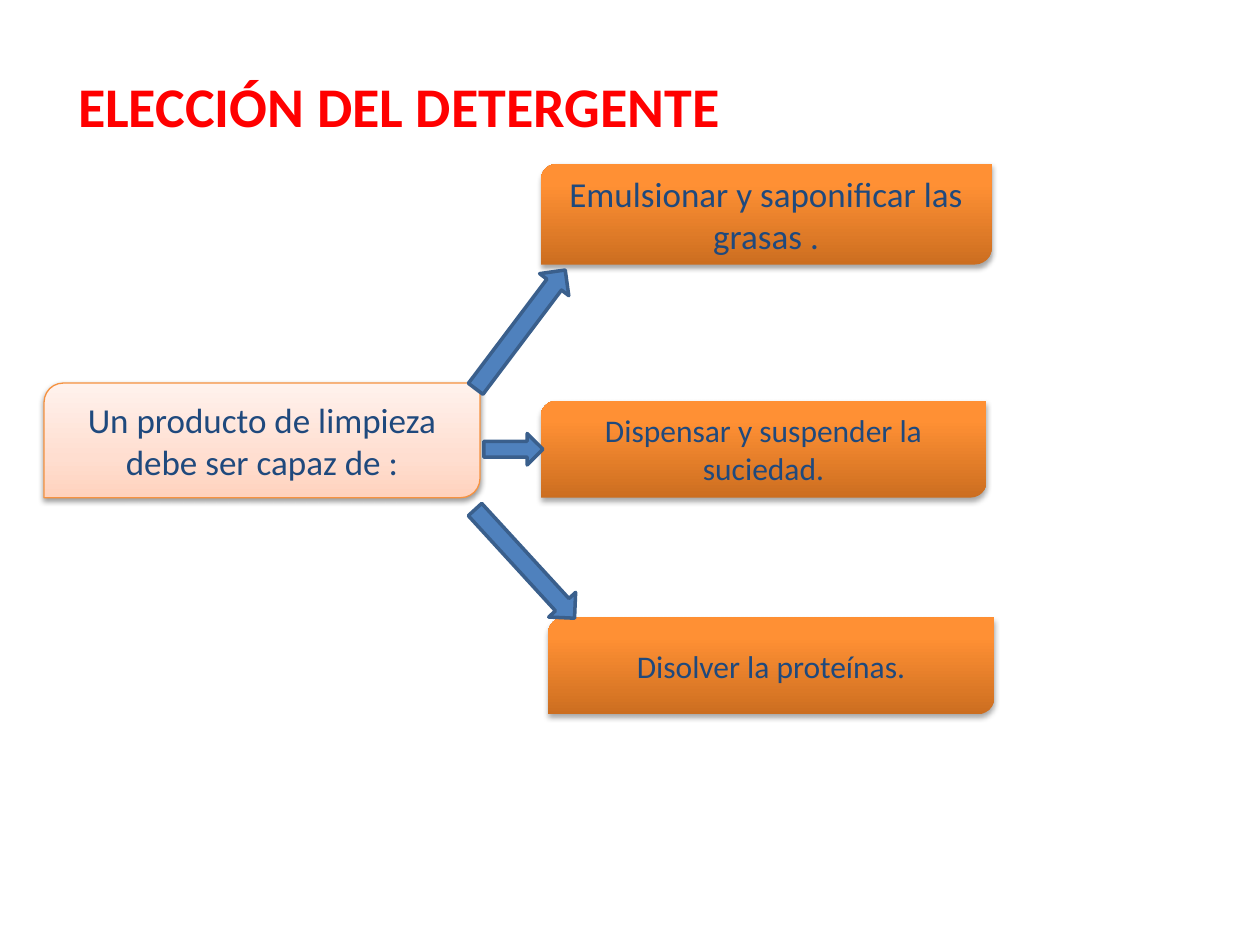
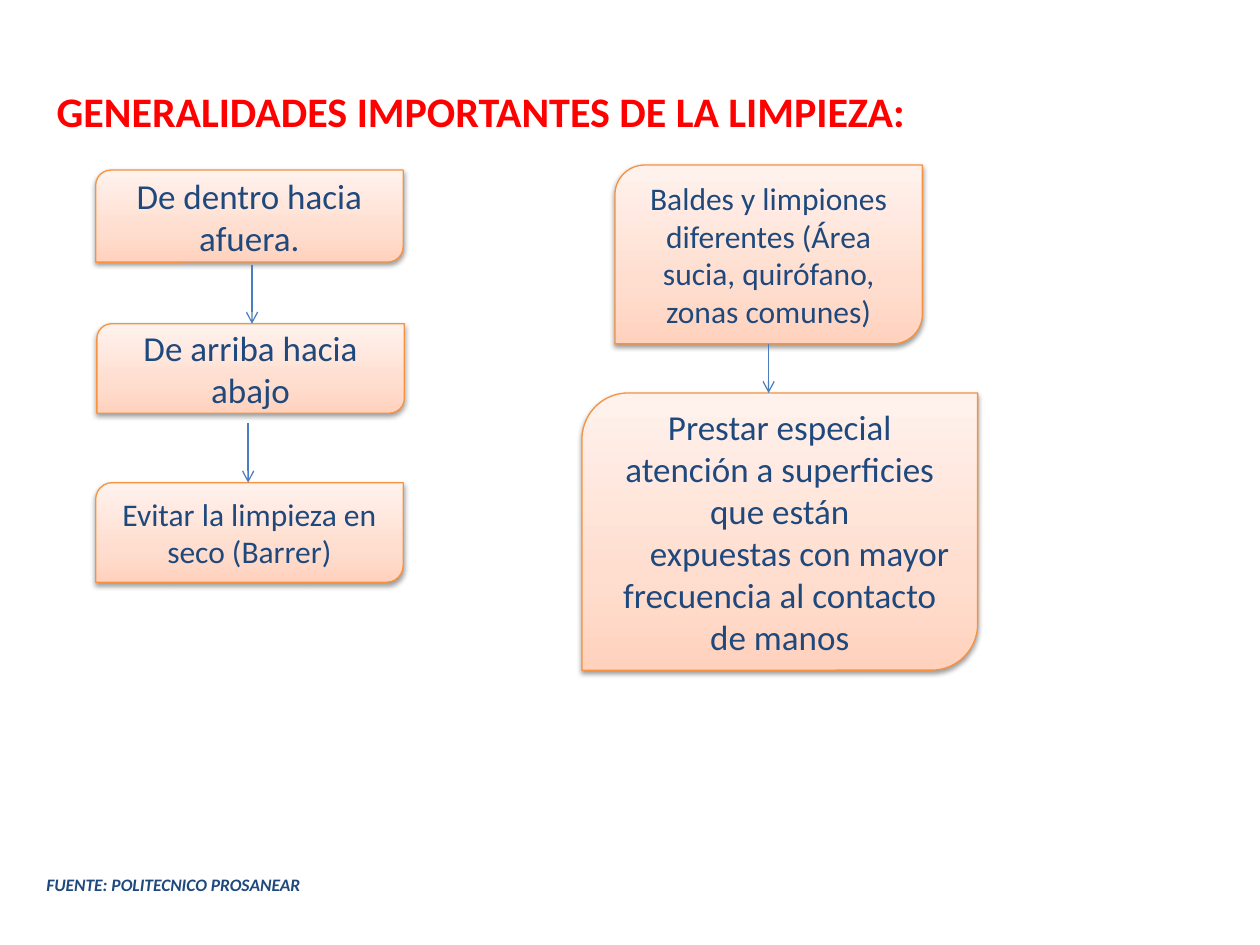
from copy import deepcopy
from pptx import Presentation
from pptx.dml.color import RGBColor
from pptx.enum.shapes import MSO_CONNECTOR, MSO_SHAPE
from pptx.enum.text import MSO_ANCHOR, MSO_AUTO_SIZE, PP_ALIGN
from pptx.oxml import parse_xml
from pptx.oxml.ns import nsdecls, qn
from pptx.util import Pt

FONT = "Calibri"
RED, NAVY = "FF0000", "1F497D"
BLUE, DARK_BLUE, LINE_BLUE = "4F81BD", "3A5F8C", "4B7EBC"
PEACH = {"stops": [(0, "FFD2BD"), (0.35, "FFDED0"), (1, "FFF2ED")],
         "border": "F69240", "shadow": (38, 1.6)}
ORANGE = {"stops": [(0, "CC6E20"), (0.8, "FF9034"), (1, "FF9136")],
          "border": None, "shadow": (35, 1.8)}

SLIDES = [
    {
        "title": ("ELECCIÓN DEL DETERGENTE", 32, (37.4, 37.4, 612, 46)),
        "cards": [
            (PEACH, 20, (25.2, 218.9, 249.1, 65.5), ["Un producto de limpieza debe ser capaz de :"]),
            (ORANGE, 20, (308.9, 93.6, 257.8, 57.6), ["Emulsionar y saponificar las grasas ."]),
            (ORANGE, 18, (308.9, 229, 254.9, 55.4), ["Dispensar y suspender la suciedad."]),
            (ORANGE, 18, (313.2, 352.8, 254.9, 55.4), ["Disolver la proteínas."]),
        ],
        "block_arrows": [
            (307, (254.9, 177.8, 85, 20.9)),
            (0, (276.5, 247.7, 33.8, 18)),
            (47.5, (257.8, 311.8, 84.2, 20.9)),
        ],
    },
    {
        "title": ("GENERALIDADES IMPORTANTES DE LA LIMPIEZA:", 24, (25.2, 45.4, 538.6, 36)),
        "cards": [
            (PEACH, 20, (54.7, 97.2, 175.7, 52.6), ["De dentro hacia afuera."]),
            (PEACH, 20, (55.4, 185, 175.7, 51.1), ["De arriba hacia abajo"]),
            (PEACH, 18, (54.7, 275.8, 175.7, 56.9), ["Evitar la limpieza en seco (Barrer)"]),
            (PEACH, 18, (351.4, 94.3, 175.7, 102.2),
             ["Baldes y limpiones diferentes (Área sucia, quirófano, zonas comunes)"]),
            (PEACH, 20, (332.6, 224.6, 226.1, 158.4),
             ["Prestar especial atención a superficies que están",
              "expuestas con mayor frecuencia al contacto de manos"]),
        ],
        "down_arrows": [(144, 151.2, 185), (141.8, 241.9, 275.8), (439.2, 196.6, 224.6)],
        "source": ("FUENTE: POLITECNICO PROSANEAR", 10, (19.4, 496.1, 422.6, 19.4)),
    },
]
SECOND_PARAGRAPH_INDENT = 22.6


def color(value):
    return RGBColor.from_string(value)


def points(values):
    return [Pt(value) for value in values]


def write(shape, paragraphs, size, ink=NAVY, bold=False, italic=False,
          align=PP_ALIGN.LEFT, anchor=MSO_ANCHOR.TOP):
    frame = shape.text_frame
    frame.word_wrap = True
    frame.auto_size = MSO_AUTO_SIZE.NONE
    frame.vertical_anchor = anchor
    frame.text = "\n".join(paragraphs)
    for index, paragraph in enumerate(frame.paragraphs):
        paragraph.alignment = align
        if index:
            paragraph._p.get_or_add_pPr().set("indent", str(Pt(SECOND_PARAGRAPH_INDENT)))
        for run in paragraph.runs:
            font = run.font
            font.name, font.size, font.bold, font.italic = FONT, Pt(size), bold, italic
            font.color.rgb = color(ink)


def add_title(slide, text, size, box):
    title = slide.shapes.title
    title.left, title.top, title.width, title.height = points(box)
    write(title, [text], size, ink=RED, bold=True)


def fill_gradient(shape, stops):
    shape.fill.gradient()
    shape.fill.gradient_angle = 90
    stop_list = shape._element.spPr.find(qn("a:gradFill")).find(qn("a:gsLst"))
    stop_list.append(deepcopy(stop_list[-1]))
    for stop, (position, value) in zip(shape.fill.gradient_stops, stops):
        stop.position = position
        stop.color.rgb = color(value)


def add_shadow(shape, opacity, distance):
    shape.shadow.inherit = False
    shape._element.spPr.find(qn("a:effectLst")).append(parse_xml(
        f'<a:outerShdw {nsdecls("a")} blurRad="{Pt(3.1)}" dist="{Pt(distance)}" '
        'dir="5400000" rotWithShape="0"><a:srgbClr val="000000">'
        f'<a:alpha val="{opacity * 1000}"/></a:srgbClr></a:outerShdw>'))


def add_card(slide, style, size, box, paragraphs):
    card = slide.shapes.add_shape(MSO_SHAPE.ROUND_2_DIAG_RECTANGLE, *points(box))
    fill_gradient(card, style["stops"])
    if style["border"]:
        card.line.color.rgb = color(style["border"])
        card.line.width = Pt(0.75)
    else:
        card.line.fill.background()
    add_shadow(card, *style["shadow"])
    write(card, paragraphs, size, align=PP_ALIGN.CENTER, anchor=MSO_ANCHOR.MIDDLE)


def add_block_arrow(slide, rotation, box):
    arrow = slide.shapes.add_shape(MSO_SHAPE.RIGHT_ARROW, *points(box))
    arrow.rotation = rotation
    arrow.shadow.inherit = False
    arrow.fill.solid()
    arrow.fill.fore_color.rgb = color(BLUE)
    arrow.line.color.rgb = color(DARK_BLUE)
    arrow.line.width = Pt(2)


def add_down_arrow(slide, x, top, bottom):
    arrow = slide.shapes.add_connector(MSO_CONNECTOR.STRAIGHT, *points((x, top, x, bottom)))
    arrow.line.color.rgb = color(LINE_BLUE)
    arrow.line.width = Pt(0.75)
    arrow.line._get_or_add_ln().append(parse_xml(f'<a:tailEnd {nsdecls("a")} type="arrow"/>'))
    arrow._element.spPr.append(parse_xml(f'<a:effectLst {nsdecls("a")}/>'))


def add_source(slide, text, size, box):
    write(slide.shapes.add_textbox(*points(box)), [text], size, bold=True, italic=True)


def main():
    presentation = Presentation()
    presentation.slide_width, presentation.slide_height = Pt(720), Pt(540)
    title_only = presentation.slide_layouts[5]
    for content in SLIDES:
        slide = presentation.slides.add_slide(title_only)
        add_title(slide, *content["title"])
        for card in content["cards"]:
            add_card(slide, *card)
        for arrow in content.get("block_arrows", []):
            add_block_arrow(slide, *arrow)
        for arrow in content.get("down_arrows", []):
            add_down_arrow(slide, *arrow)
        if "source" in content:
            add_source(slide, *content["source"])
    presentation.save("out.pptx")


if __name__ == "__main__":
    main()
